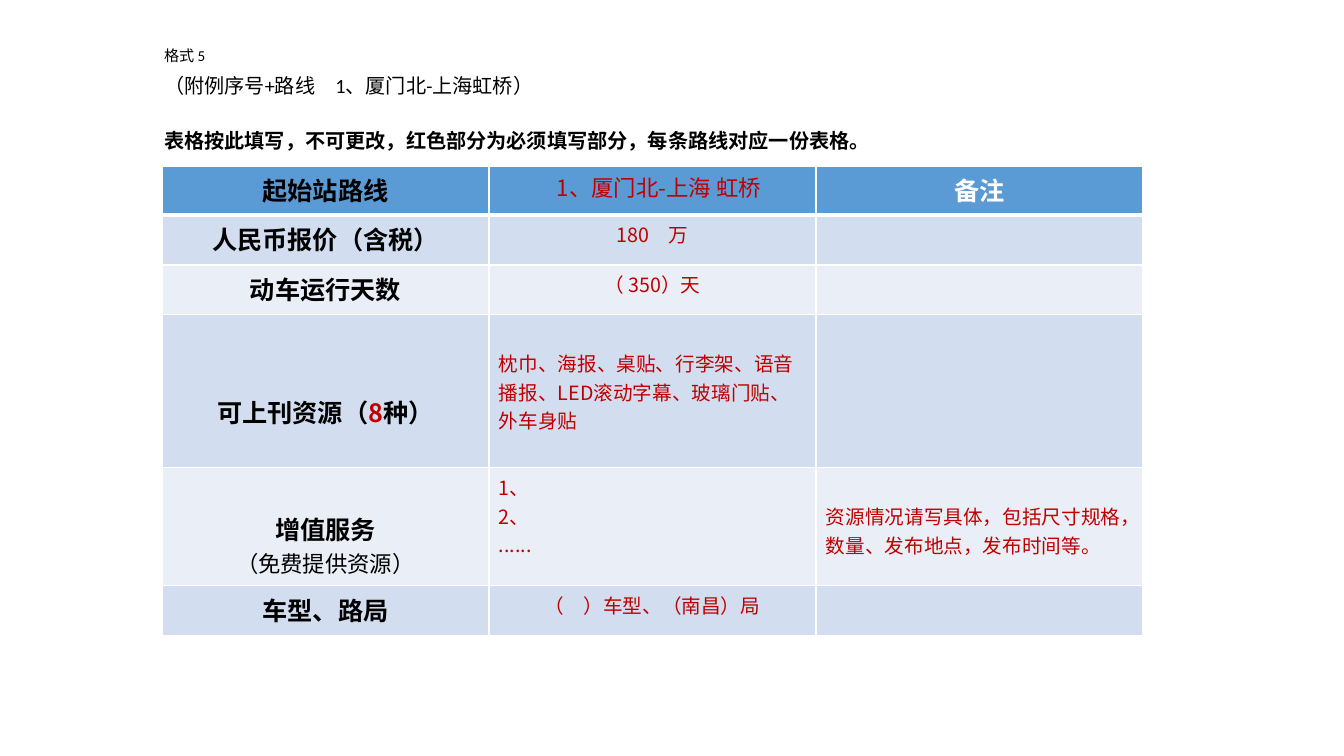
from dataclasses import dataclass

from lxml import etree
from pptx import Presentation
from pptx import util as u
from pptx.dml.color import RGBColor
from pptx.enum import text
from pptx.oxml.ns import qn

PX = 914400 / 100.8
CENTER, LEFT = text.PP_ALIGN.CENTER, text.PP_ALIGN.LEFT


@dataclass(frozen=True)
class Theme:
    latin: str = "Calibri"
    cjk: str = "Noto Sans CJK SC"
    black: str = "000000"
    white: str = "FFFFFF"
    red: str = "C00000"
    header: str = "5B9BD5"
    bands: tuple = ("EAEFF7", "D2DEEF")
    small: float = 10.8
    lead: float = 14.4
    label: float = 18
    medium: float = 16
    body: float = 14


THEME = Theme()


def px(value):
    return u.Emu(round(value * PX))


def add_run(paragraph, words, size, color, bold=False, latin=THEME.cjk):
    run = paragraph.add_run()
    run.text = words
    font = run.font
    font.size, font.bold, font.name = u.Pt(size), bold, latin
    font.color.rgb = RGBColor.from_string(color)
    east_asian = etree.SubElement(run._r.get_or_add_rPr(), qn("a:ea"))
    east_asian.set("typeface", THEME.cjk)


def label(words, color=THEME.black):
    return words, THEME.label, color, True


def entry(words, size=THEME.body):
    return words, size, THEME.red


def fill_title(title):
    title.left, title.top, title.width, title.height = map(px, (154, 44, 1123, 113))
    frame = title.text_frame
    frame.word_wrap = True
    frame.auto_size = text.MSO_AUTO_SIZE.NONE
    frame.vertical_anchor = text.MSO_ANCHOR.MIDDLE
    frame.margin_top = frame.margin_bottom = 0
    lines = [
        ("格式 5", THEME.small, False, 0),
        ("（附例序号+路线　1、厦门北-上海虹桥）", THEME.lead, False, 8),
        ("表格按此填写，不可更改，红色部分为必须填写部分，每条路线对应一份表格。",
         THEME.lead, True, 23.5),
    ]
    for index, (words, size, bold, gap) in enumerate(lines):
        paragraph = frame.add_paragraph() if index else frame.paragraphs[0]
        paragraph.alignment = LEFT
        paragraph.line_spacing = 0.9
        paragraph.space_before = u.Pt(gap)
        add_run(paragraph, words, size, THEME.black, bold, THEME.latin)


def set_borders(cell, bottom_width):
    properties = cell._tc.get_or_add_tcPr()
    widths = {"a:lnL": 1, "a:lnR": 1, "a:lnT": 1, "a:lnB": bottom_width}
    for position, (tag, width) in enumerate(widths.items()):
        line = etree.Element(qn(tag), w=str(u.Pt(width)))
        solid = etree.SubElement(line, qn("a:solidFill"))
        etree.SubElement(solid, qn("a:srgbClr"), val=THEME.white)
        properties.insert(position, line)


def fill_cell(cell, paragraphs, alignment=CENTER, top=5, left=10):
    cell.margin_top, cell.margin_left = px(top), px(left)
    for index, runs in enumerate(paragraphs):
        frame = cell.text_frame
        paragraph = frame.add_paragraph() if index else frame.paragraphs[0]
        paragraph.alignment = alignment
        for run in runs:
            add_run(paragraph, *run)


def add_form(slide, rows, heights):
    width = 327
    frame = slide.shapes.add_table(len(rows), 3, px(162), px(166),
                                   px(3 * width), px(sum(heights)))
    table = frame.table
    for column in table.columns:
        column.width = px(width)
    for index, (cells, height) in enumerate(zip(rows, heights)):
        table.rows[index].height = px(height)
        color = THEME.bands[index % 2] if index else THEME.header
        for column in range(3):
            cell = table.cell(index, column)
            cell.fill.solid()
            cell.fill.fore_color.rgb = RGBColor.from_string(color)
            set_borders(cell, 1 if index else 3)
            if column < len(cells):
                fill_cell(cell, **cells[column])


def content(*paragraphs, **layout):
    return {"paragraphs": paragraphs, **layout}


def main():
    presentation = Presentation()
    presentation.slide_width, presentation.slide_height = px(1344), px(756)
    slide = presentation.slides.add_slide(presentation.slide_layouts[5])

    # Heading lines
    fill_title(slide.shapes.title)

    # Quotation form: label, entry, remark
    rows = [
        [content([label("起始站路线")]),
         content([entry("1、厦门北-上海 虹桥", THEME.medium)], left=23),
         content([label("备注", THEME.white)])],
        [content([label("人民币报价（含税）")]), content([entry("180　万")])],
        [content([label("动车运行天数")]), content([entry("（ 350）天")])],
        [content([label("可上刊资源（"), label("8", THEME.red), label("种）")], top=78),
         content([entry("枕巾、海报、桌贴、行李架、语音播报、LED滚动字幕、玻璃门贴、外车身贴")],
                 alignment=LEFT, top=34)],
        [content([label("增值服务")],
                 [("（免费提供资源）", THEME.medium, THEME.black)], top=42),
         content([entry("1、")], [entry("2、")], [entry("......")], alignment=LEFT),
         content([entry("资源情况请写具体，包括尺寸规格，数量、发布地点，发布时间等。")],
                 alignment=LEFT, top=34)],
        [content([label("车型、路局")]), content([entry("（　）车型、（南昌）局")])],
    ]
    add_form(slide, rows, heights=[49, 50, 50, 153, 118, 50])

    presentation.save("out.pptx")


if __name__ == "__main__":
    main()
